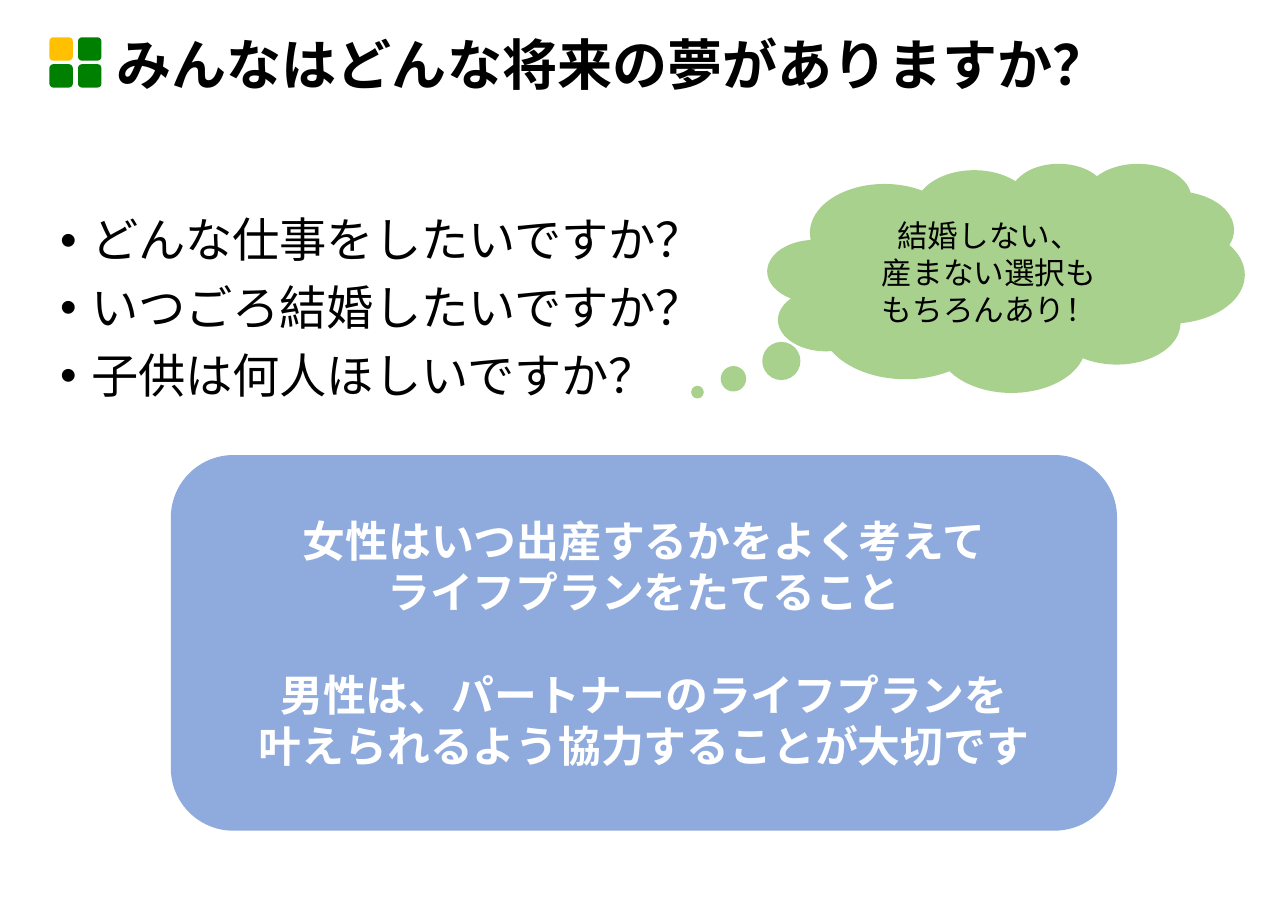
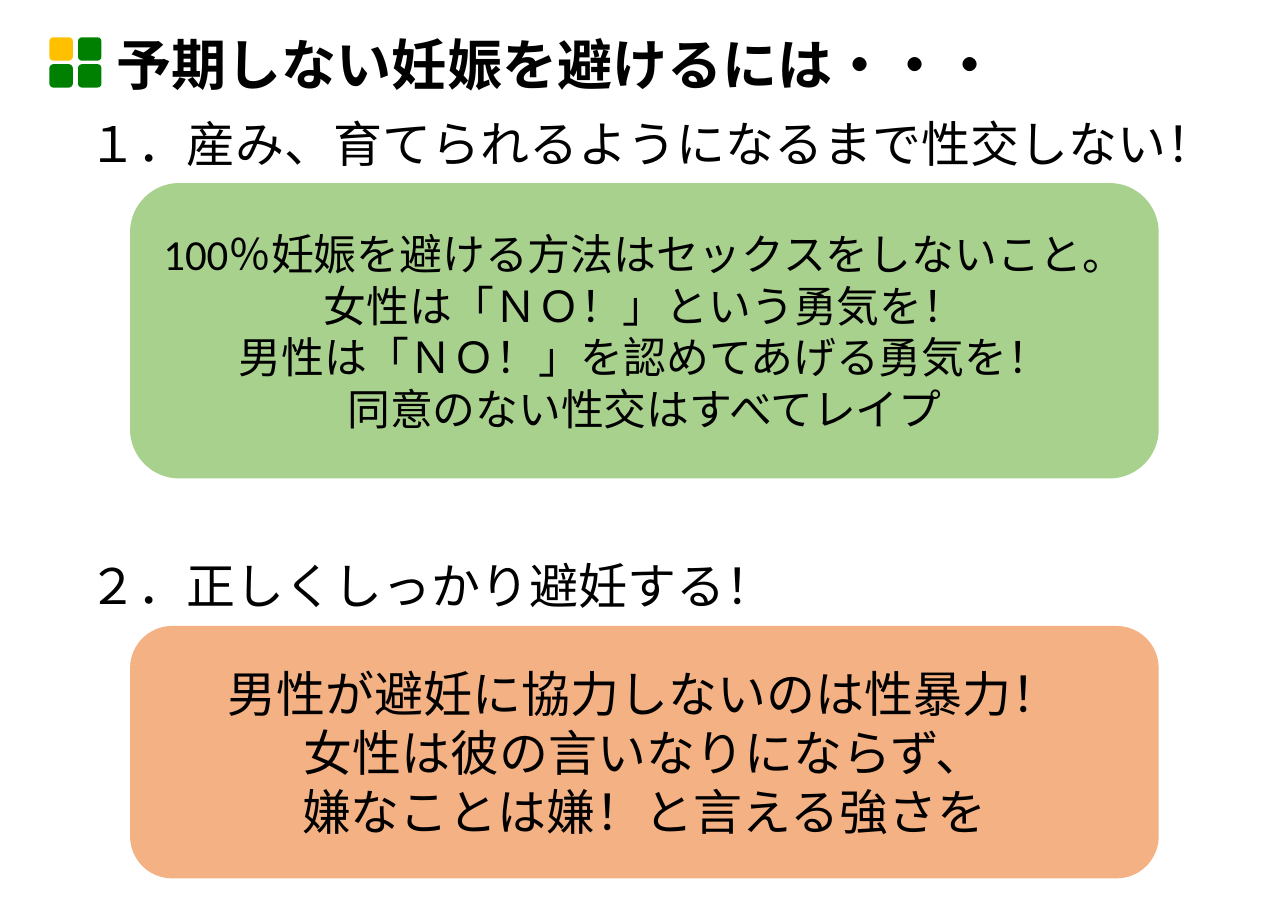
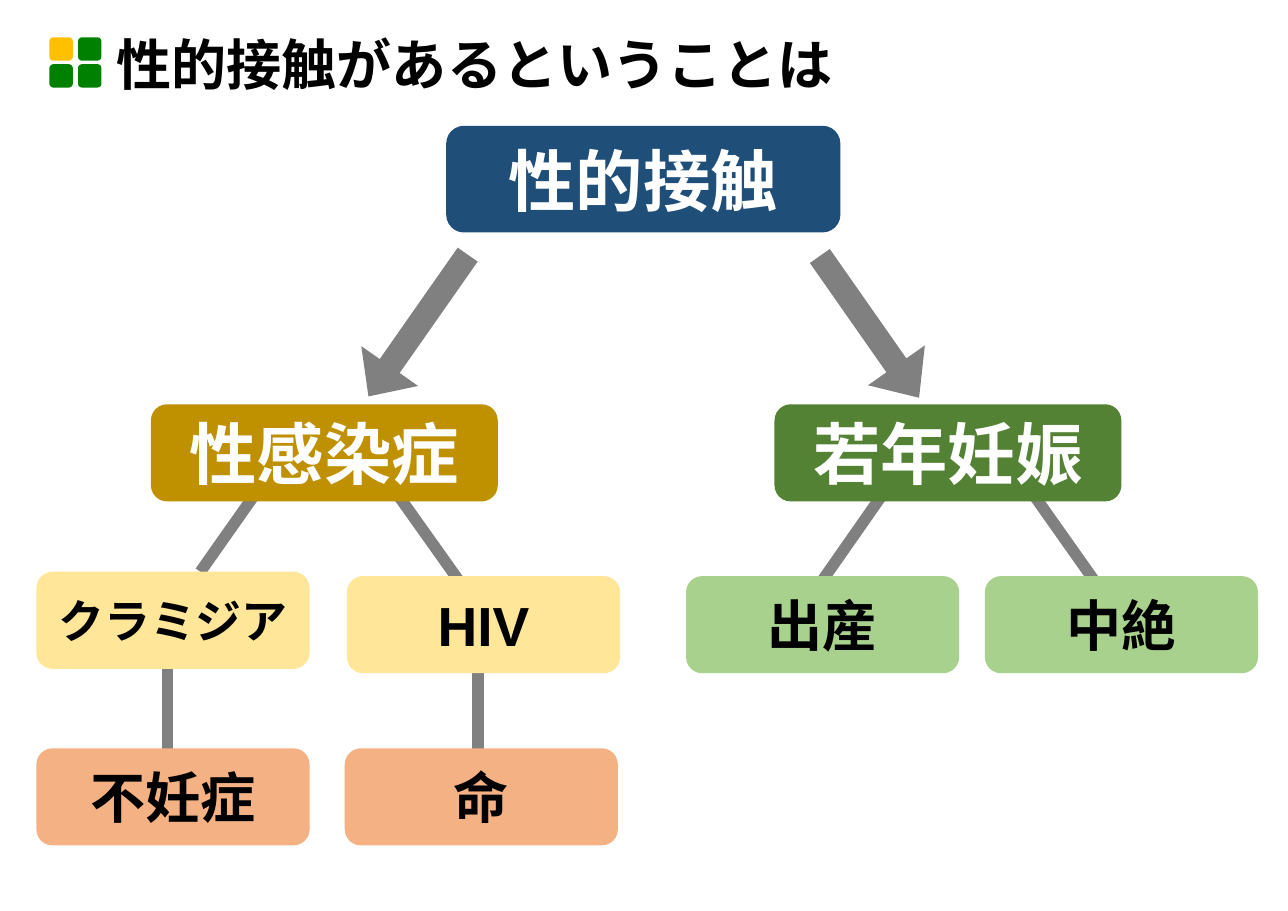
import pptx
import pptx.dml.color
import pptx.enum.shapes
import pptx.enum.text
import pptx.oxml.ns
import pptx.util
from lxml import etree

Cm = pptx.util.Cm
Pt = pptx.util.Pt
RGB = pptx.dml.color.RGBColor
SHAPE = pptx.enum.shapes.MSO_SHAPE
ALIGN = pptx.enum.text.PP_ALIGN
ANCHOR = pptx.enum.text.MSO_ANCHOR
qn = pptx.oxml.ns.qn

BLACK = RGB(0x00, 0x00, 0x00)
WHITE = RGB(0xFF, 0xFF, 0xFF)
GRAY = RGB(0x80, 0x80, 0x80)
AMBER = RGB(0xFF, 0xC0, 0x00)
GREEN = RGB(0x00, 0x80, 0x00)
BLUE = RGB(0x8F, 0xAA, 0xDC)
NAVY = RGB(0x1F, 0x4E, 0x79)
GOLD = RGB(0xBF, 0x90, 0x00)
FOREST = RGB(0x54, 0x82, 0x35)
LIME = RGB(0xA9, 0xD1, 0x8E)
CREAM = RGB(0xFF, 0xE6, 0x99)
PEACH = RGB(0xF4, 0xB1, 0x83)

ARIAL = "Arial"
CALIBRI = "Calibri"
NOTO = "Noto Sans CJK JP"


class Deck:
    """Holds the shared style and the slide being built."""

    def __init__(self):
        self.prs = pptx.Presentation()
        self.prs.slide_width = Cm(29.7)
        self.prs.slide_height = Cm(21)
        self.s = None

    def slide(self, title):
        self.s = self.prs.slides.add_slide(self.prs.slide_layouts[6])
        icon = self.s.shapes.add_group_shape()
        for i in range(4):
            row, col = divmod(i, 2)
            self.shape(SHAPE.ROUNDED_RECTANGLE,
                       (1.14 + col * 0.66, 0.86 + row * 0.62, 0.54, 0.54),
                       GREEN if i else AMBER, icon.shapes)
        self.text((2.44, 0.76, 27.2, 5.05), [title], 36, NOTO, bold=True, spacing=0.9)

    def shape(self, kind, box, fill, shapes=None, adj=(), rotation=0):
        sp = (shapes or self.s.shapes).add_shape(kind, *map(Cm, box))
        sp.shadow.inherit = False
        sp.fill.solid()
        sp.fill.fore_color.rgb = fill
        sp.line.fill.background()
        sp.rotation = rotation
        for i, value in enumerate(adj):
            sp.adjustments[i] = value
        return sp

    def add_lines(self, tf, lines, size, font, color=BLACK, bold=False, align=ALIGN.LEFT,
                  spacing=1.0):
        for i, line in enumerate(lines):
            p = tf.add_paragraph() if i else tf.paragraphs[0]
            p.alignment = align
            p.line_spacing = spacing
            r = p.add_run()
            r.text = line
            r.font.size = Pt(size)
            r.font.name = font
            r.font.bold = bold
            r.font.color.rgb = color
            if font == NOTO:
                ea = etree.SubElement(r.font._element, qn("a:ea"))
                ea.set("typeface", font)

    def text(self, box, lines, size, font, **style):
        tf = self.s.shapes.add_textbox(*map(Cm, box)).text_frame
        tf.word_wrap = True
        self.add_lines(tf, lines, size, font, **style)
        return tf

    def bullets(self, box, lines, size, font, gap):
        tf = self.text(box, lines, size, font, spacing=0.9)
        for p in tf.paragraphs:
            p.space_before = Pt(gap)
            pPr = p._p.get_or_add_pPr()
            pPr.set("marL", str(Cm(0.71)))
            pPr.set("indent", str(-Cm(0.71)))
            etree.SubElement(pPr, qn("a:buFont")).set("typeface", ARIAL)
            etree.SubElement(pPr, qn("a:buChar")).set("char", "•")

    def panel(self, box, fill, lines, size, font, color=BLACK, bold=False,
              kind=SHAPE.ROUNDED_RECTANGLE, adj=()):
        tf = self.shape(kind, box, fill, adj=adj).text_frame
        tf.word_wrap = True
        tf.vertical_anchor = ANCHOR.MIDDLE
        self.add_lines(tf, lines, size, font, color, bold, ALIGN.CENTER)
        return tf

    def bar(self, x1, y1, x2, y2):
        cn = self.s.shapes.add_connector(pptx.enum.shapes.MSO_CONNECTOR.STRAIGHT,
                                         Cm(x1), Cm(y1), Cm(x2), Cm(y2))
        cn.line.width = Pt(7.5)
        cn.line.color.rgb = GRAY
        etree.SubElement(cn._element.spPr, qn("a:effectLst"))


def dreams(deck):
    deck.slide("みんなはどんな将来の夢がありますか？")
    deck.bullets((1.14, 4.88, 16.43, 5.05),
                 ["どんな仕事をしたいですか？", "いつごろ結婚したいですか？", "子供は何人ほしいですか？"],
                 30.9, CALIBRI, 11)
    tf = deck.panel((3.94, 10.49, 21.82, 8.66), BLUE,
                    ["女性はいつ出産するかをよく考えて", "ライフプランをたてること",
                     "男性は、パートナーのライフプランを", "叶えられるよう協力することが大切です"],
                    28, ARIAL, WHITE, True)
    tf.paragraphs[2].space_before = Pt(33.5)
    deck.panel((17.7, 3.76, 11, 5.28), LIME,
               ["結婚しない、", "産まない選択も", "もちろんあり！"], 20, CALIBRI,
               kind=SHAPE.CLOUD_CALLOUT, adj=(-0.647, 0.5))


def prevention(deck):
    deck.slide("予期しない妊娠を避けるには・・・")
    for top, heading in ((2.49, "１．産み、育てられるようになるまで性交しない！"),
                         (12.68, "２．正しくしっかり避妊する！")):
        deck.text((1.8, top, 26.62, 1.7), [heading], 32, NOTO)
    deck.panel((3, 4.22, 23.72, 6.81), LIME,
               ["100％妊娠を避ける方法はセックスをしないこと。", "女性は「ＮＯ！」という勇気を！",
                "男性は「ＮＯ！」を認めてあげる勇気を！", "同意のない性交はすべてレイプ"],
               28, CALIBRI)
    deck.panel((3, 14.43, 23.72, 5.82), PEACH,
               ["男性が避妊に協力しないのは性暴力！", "女性は彼の言いなりにならず、",
                "嫌なことは嫌！と言える強さを"], 32, CALIBRI)


def consequences(deck):
    deck.slide("性的接触があるということは")
    for ends in ((6.05, 11.15, 4.62, 13.18), (9.19, 11.43, 10.62, 13.44),
                 (20.32, 11.44, 18.95, 13.4), (23.83, 11.4, 25.25, 13.41),
                 (3.86, 15.14, 3.86, 17.6), (11.02, 15.14, 11.02, 17.6)):
        deck.bar(*ends)
    for left, top, turn, head in ((8.84, 5.51, 35, 0.534), (19.25, 5.54, 325, 0.57)):
        deck.shape(SHAPE.DOWN_ARROW, (left, top, 1.6, 3.99), GRAY,
                   adj=(0.351, head), rotation=turn)
    for box, fill, label in (((10.29, 2.9, 9.09, 2.46), NAVY, "性的接触"),
                             ((3.48, 9.32, 8, 2.24), GOLD, "性感染症"),
                             ((17.86, 9.32, 8, 2.24), FOREST, "若年妊娠")):
        deck.panel(box, fill, [label], 44, ARIAL, WHITE, True)
    for left, top, fill, label, size in ((15.82, 13.28, LIME, "出産", 36),
                                         (22.71, 13.28, LIME, "中絶", 36),
                                         (8, 13.28, CREAM, "HIV", 36),
                                         (0.84, 13.18, CREAM, "クラミジア", 30),
                                         (7.95, 17.25, PEACH, "命", 36),
                                         (0.84, 17.25, PEACH, "不妊症", 36)):
        deck.panel((left, top, 6.3, 2.24), fill, [label], size, ARIAL, bold=True)


def main():
    deck = Deck()
    for build in (dreams, prevention, consequences):
        build(deck)
    deck.prs.save("out.pptx")


if __name__ == "__main__":
    main()
